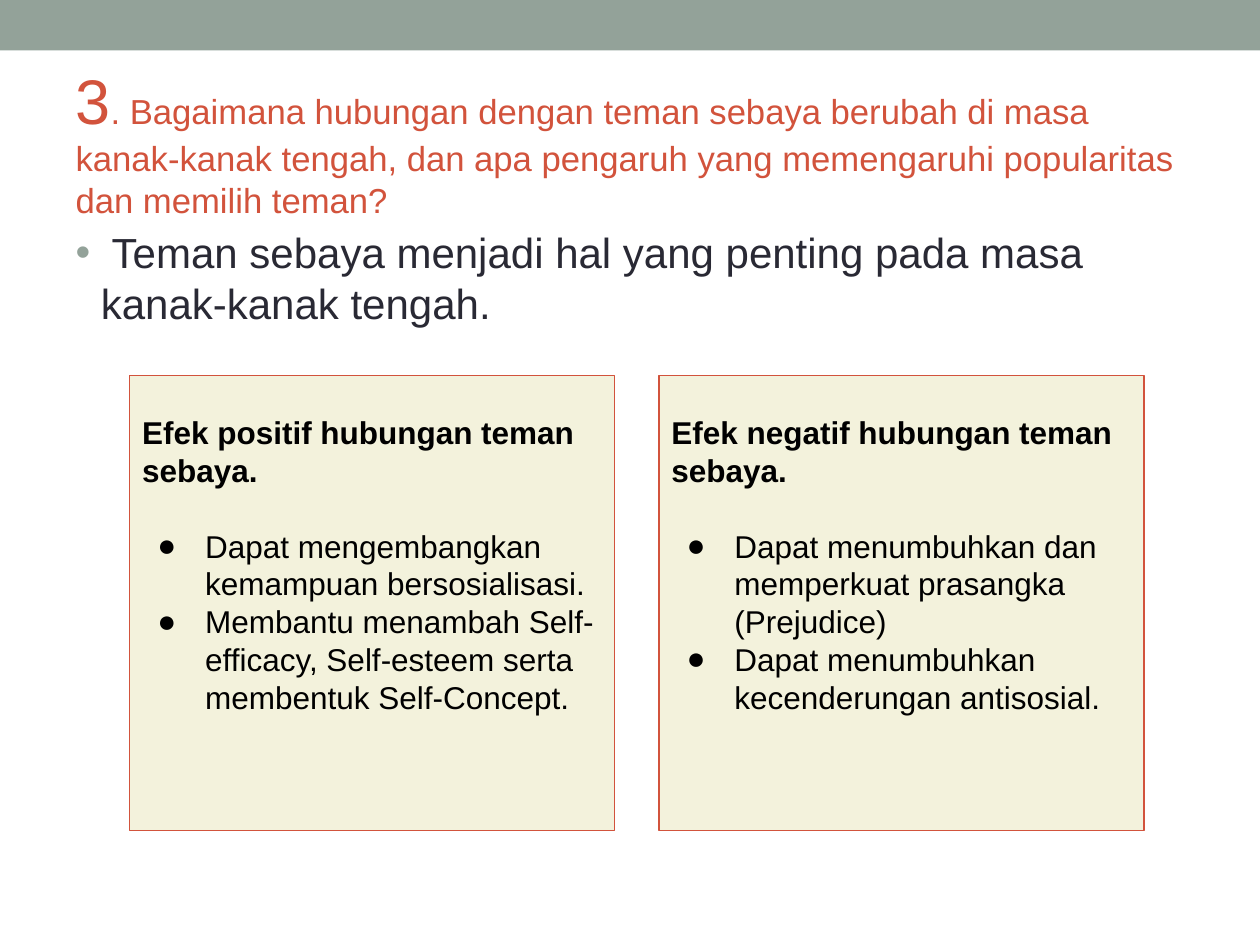
from lxml import etree
from pptx import Presentation
from pptx.dml.color import RGBColor
from pptx.enum.shapes import MSO_SHAPE as Shape
from pptx.enum.text import MSO_ANCHOR as Anchor, MSO_AUTO_SIZE as AutoSize, PP_ALIGN as Align
from pptx.oxml.ns import qn
from pptx.util import Inches, Pt

# Content
TITLE_NUMBER = "3"
TITLE_TEXT = (". Bagaimana hubungan dengan teman sebaya berubah di masa kanak-kanak tengah, "
              "dan apa pengaruh yang memengaruhi popularitas dan memilih teman?")
BODY_TEXT = " Teman sebaya menjadi hal yang penting pada masa kanak-kanak tengah."
CARDS = [
    ("Efek positif hubungan teman sebaya.",
     ["Dapat mengembangkan kemampuan bersosialisasi.",
      "Membantu menambah Self-efficacy, Self-esteem serta membentuk Self-Concept."]),
    ("Efek negatif hubungan teman sebaya.",
     ["Dapat menumbuhkan dan memperkuat prasangka (Prejudice)",
      "Dapat menumbuhkan kecenderungan antisosial."]),
]

THEME = {
    "font": "Arial",
    "band": "93A299", "accent": "D2533C", "text": "292934", "card": "F3F2DC", "black": "000000",
    "number_size": 36, "title_size": 19.8, "body_size": 24, "card_size": 18,
}

# Layout, in inches
CARD_LEFT, CARD_TOP, CARD_WIDTH, CARD_HEIGHT, CARD_GAP = 1.03, 2.98, 3.85, 3.61, 0.35
TEXT_OFFSET, TEXT_HEIGHT = 0.2, 2.9


def color(name):
    return RGBColor.from_string(THEME[name])


def place(shape, left, top, width, height):
    box = {"left": left, "top": top, "width": width, "height": height}
    for name, value in box.items():
        setattr(shape, name, Inches(value))


def set_frame(frame, anchor, vertical_margin):
    settings = {
        "word_wrap": True, "auto_size": AutoSize.NONE, "vertical_anchor": anchor,
        "margin_left": Inches(0.1), "margin_right": Inches(0.1),
        "margin_top": Inches(vertical_margin), "margin_bottom": Inches(vertical_margin),
    }
    for name, value in settings.items():
        setattr(frame, name, value)


def add_run(paragraph, text, size, color_name, bold=False):
    run = paragraph.add_run()
    run.text = text
    settings = {"name": THEME["font"], "size": Pt(THEME[size]), "bold": bold}
    for name, value in settings.items():
        setattr(run.font, name, value)
    run.font.color.rgb = color(color_name)


def add_bullet(paragraph, character, color_name, indent, hanging):
    properties = paragraph._p.get_or_add_pPr()
    properties.set("marL", str(Inches(indent)))
    properties.set("indent", str(-Inches(hanging)))
    bullet_color = etree.SubElement(properties, qn("a:buClr"))
    etree.SubElement(bullet_color, qn("a:srgbClr"), val=THEME[color_name])
    etree.SubElement(properties, qn("a:buFont"), typeface=THEME["font"])
    etree.SubElement(properties, qn("a:buChar"), char=character)


def add_rectangle(slide, box, fill, line=None):
    shape = slide.shapes.add_shape(Shape.RECTANGLE, *map(Inches, box))
    shape.shadow.inherit = False
    shape.fill.solid()
    shape.fill.fore_color.rgb = color(fill)
    if line:
        shape.line.color.rgb = color(line)
        shape.line.width = Pt(0.75)
    else:
        shape.line.fill.background()


def add_card(slide, left, heading, points):
    add_rectangle(slide, (left, CARD_TOP, CARD_WIDTH, CARD_HEIGHT), "card", "accent")
    box = (left, CARD_TOP + TEXT_OFFSET, CARD_WIDTH, TEXT_HEIGHT)
    frame = slide.shapes.add_textbox(*map(Inches, box)).text_frame
    set_frame(frame, Anchor.TOP, 0.1)
    paragraph = frame.paragraphs[0]
    paragraph.space_after = Pt(1.2 * THEME["card_size"])
    add_run(paragraph, heading, "card_size", "black", bold=True)
    for point in points:
        paragraph = frame.add_paragraph()
        add_bullet(paragraph, "●", "black", 0.5, 0.38)
        add_run(paragraph, point, "card_size", "black")


def main():
    presentation = Presentation()
    presentation.slide_width, presentation.slide_height = Inches(10), Inches(7.5)
    slide = presentation.slides.add_slide(presentation.slide_layouts[1])

    # Top band
    add_rectangle(slide, (0, 0, 10, 0.4), "band")

    # Title
    title = slide.shapes.title
    place(title, 0.5, 0.58, 9, 1.08)
    set_frame(title.text_frame, Anchor.MIDDLE, 0.05)
    paragraph = title.text_frame.paragraphs[0]
    paragraph.alignment = Align.LEFT
    add_run(paragraph, TITLE_NUMBER, "number_size", "accent")
    add_run(paragraph, TITLE_TEXT, "title_size", "accent")

    # Body
    body = slide.placeholders[1]
    place(body, 0.5, 1.75, 9, 5.33)
    set_frame(body.text_frame, Anchor.TOP, 0.05)
    paragraph = body.text_frame.paragraphs[0]
    paragraph.space_before = Pt(0)
    add_bullet(paragraph, "•", "band", 0.2, 0.2)
    add_run(paragraph, BODY_TEXT, "body_size", "text")

    # Effect cards
    for index, (heading, points) in enumerate(CARDS):
        add_card(slide, CARD_LEFT + index * (CARD_WIDTH + CARD_GAP), heading, points)

    presentation.save("out.pptx")


if __name__ == "__main__":
    main()
